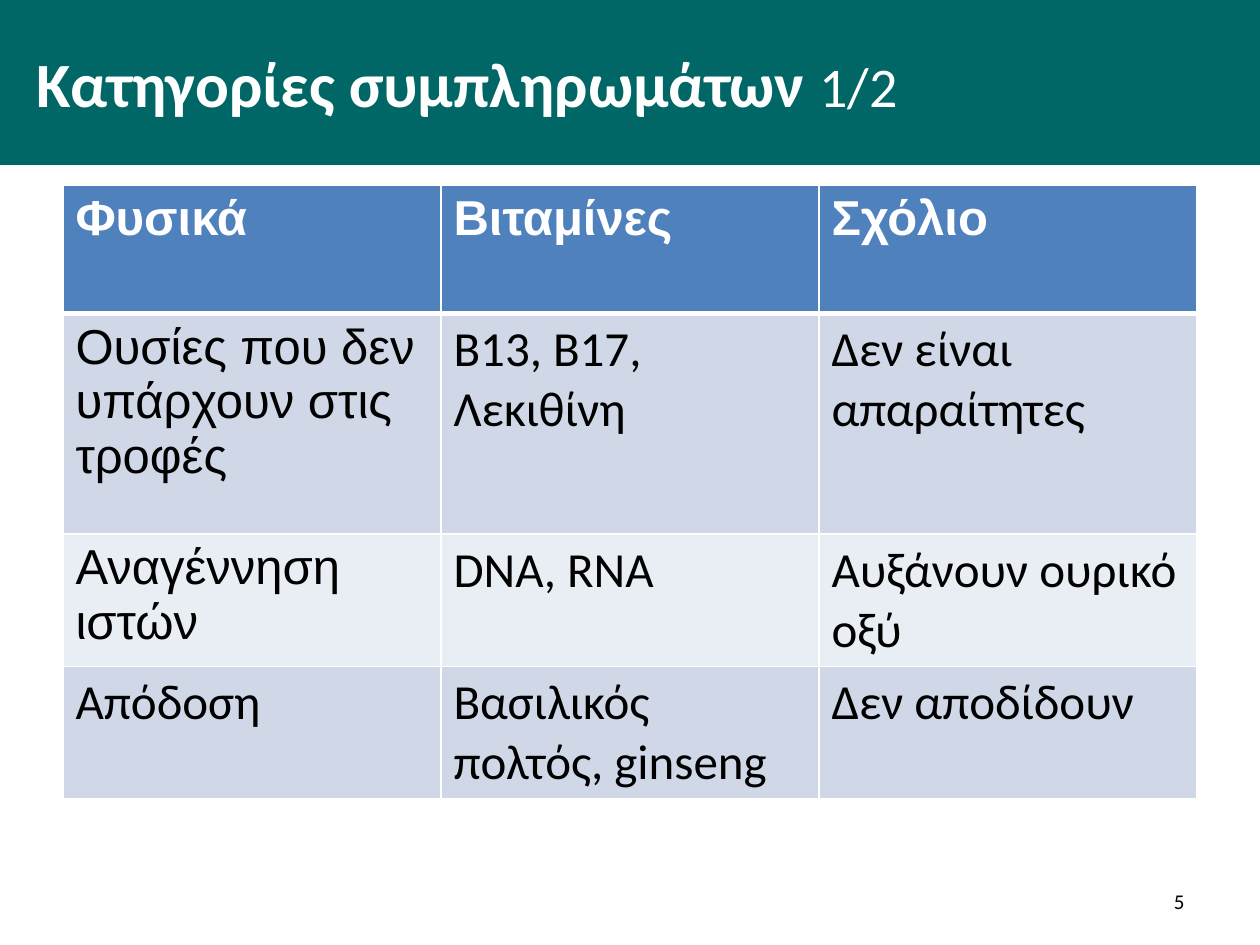
from lxml.etree import SubElement
from pptx import Presentation
from pptx.dml.color import RGBColor as Rgb
from pptx.enum.shapes import MSO_SHAPE as Shape
from pptx.enum.text import MSO_ANCHOR as Anchor, PP_ALIGN as Align
from pptx.oxml.ns import qn
from pptx.util import Inches, Pt

# Content
TITLE = [("Κατηγορίες συμπληρωμάτων ", "title"), ("1/2", "part")]
HEADER = ["Φυσικά", "Βιταμίνες", "Σχόλιο"]
ROWS = [
    ["Ουσίες που δεν υπάρχουν στις τροφές", "Β13, Β17, Λεκιθίνη", "Δεν είναι απαραίτητες"],
    ["Αναγέννηση ιστών", "DNA, RNA", "Αυξάνουν ουρικό οξύ"],
    ["Απόδοση", "Βασιλικός πολτός, ginseng", "Δεν αποδίδουν"],
]
ARIAL_LABELS = {ROWS[0][0], ROWS[1][0]}
PAGE_NUMBER = "5"

# Theme: text styles are font, size, colour, bold
THEME = {
    "banner": "006666", "head_fill": "4F81BD", "bands": ["D0D8E8", "E9EDF4"], "border": "FFFFFF",
    "title": ("Calibri", 36, "FFFFFF", True),
    "part": ("Calibri", 32, "FFFFFF", False),
    "head": ("Arial", 28, "FFFFFF", True),
    "label": ("Arial", 28, "000000", False),
    "body": ("Calibri", 28, "000000", False),
    "number": ("Calibri", 12, "000000", False),
}

# Layout in inches
WIDTH, HEIGHT = 10, 7.5
MARGIN = 0.05 * WIDTH
BANNER_HEIGHT = 1.31
TABLE_TOP = 1.47
ROW_HEIGHT, TALL_ROW = 1.02, 1.75
ROW_HEIGHTS = [ROW_HEIGHT, TALL_ROW, ROW_HEIGHT, ROW_HEIGHT]
NUMBER_WIDTH, NUMBER_TOP, NUMBER_HEIGHT = 2.33, 6.95, 0.4


def add_span(para, text, style):
    span = para.add_run()
    span.text = text
    name, size, colour, span.font.bold = THEME[style]
    span.font.name, span.font.size = name, Pt(size)
    span.font.color.rgb = Rgb.from_string(colour)


def paint(target, colour):
    target.fill.solid()
    target.fill.fore_color.rgb = Rgb.from_string(colour)


def add_borders(cell, bottom):
    props = cell._tc.get_or_add_tcPr()
    sides = {"lnL": 1, "lnR": 1, "lnT": 1, "lnB": bottom}
    for position, (side, points) in enumerate(sides.items()):
        line = SubElement(props, qn(f"a:{side}"), w=str(Pt(points)))
        fill = SubElement(line, qn("a:solidFill"))
        SubElement(fill, qn("a:srgbClr"), val=THEME["border"])
        props.insert(position, line)  # borders come before the cell fill


def add_title(page):
    banner = page.shapes.add_shape(Shape.RECTANGLE, 0, 0, Inches(WIDTH), Inches(BANNER_HEIGHT))
    banner.shadow.inherit = False
    paint(banner, THEME["banner"])
    banner.line.fill.background()
    frame = banner.text_frame
    frame.word_wrap, frame.vertical_anchor = True, Anchor.MIDDLE
    para = frame.paragraphs[0]
    para.alignment = Align.LEFT
    para._p.get_or_add_pPr().set("marL", str(Inches(0.19)))
    for text, style in TITLE:
        add_span(para, text, style)


def add_supplements(page):
    grid = [HEADER] + ROWS
    table = page.shapes.add_table(
        len(grid), len(HEADER), Inches(MARGIN), Inches(TABLE_TOP),
        Inches(WIDTH - 2 * MARGIN), Inches(sum(ROW_HEIGHTS))).table
    for r, texts in enumerate(grid):
        table.rows[r].height = Inches(ROW_HEIGHTS[r])
        is_head = r == 0
        for c, text in enumerate(texts):
            cell = table.cell(r, c)
            paint(cell, THEME["head_fill"] if is_head else THEME["bands"][(r - 1) % 2])
            add_borders(cell, bottom=3 if is_head else 1)
            style = "head" if is_head else "label" if text in ARIAL_LABELS else "body"
            add_span(cell.text_frame.paragraphs[0], text, style)


def add_page_number(page):
    box = page.shapes.add_textbox(
        Inches(WIDTH - MARGIN - NUMBER_WIDTH), Inches(NUMBER_TOP),
        Inches(NUMBER_WIDTH), Inches(NUMBER_HEIGHT))
    frame = box.text_frame
    frame.word_wrap, frame.vertical_anchor = True, Anchor.MIDDLE
    para = frame.paragraphs[0]
    para.alignment = Align.RIGHT
    add_span(para, PAGE_NUMBER, "number")


def main():
    deck = Presentation()
    deck.slide_width, deck.slide_height = Inches(WIDTH), Inches(HEIGHT)
    page = deck.slides.add_slide(deck.slide_layouts[6])
    add_title(page)
    add_supplements(page)
    add_page_number(page)
    deck.save("out.pptx")


if __name__ == "__main__":
    main()
